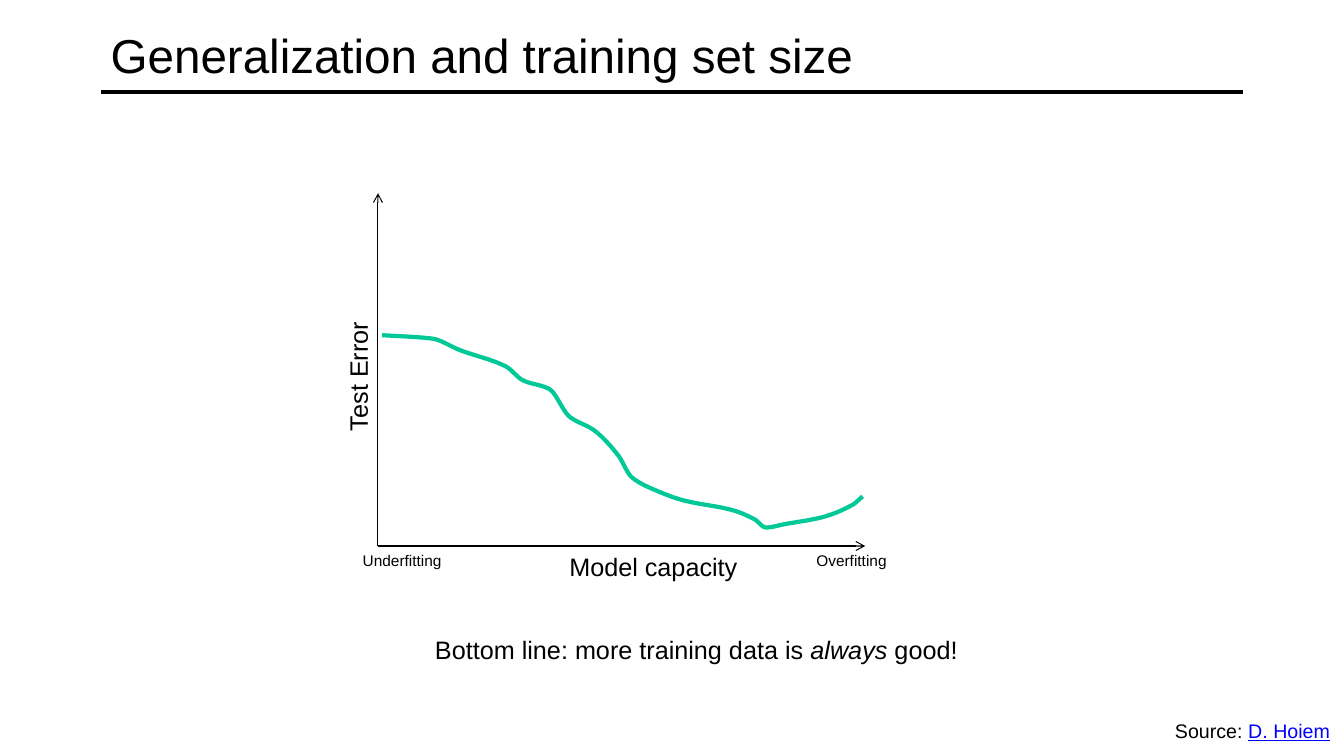
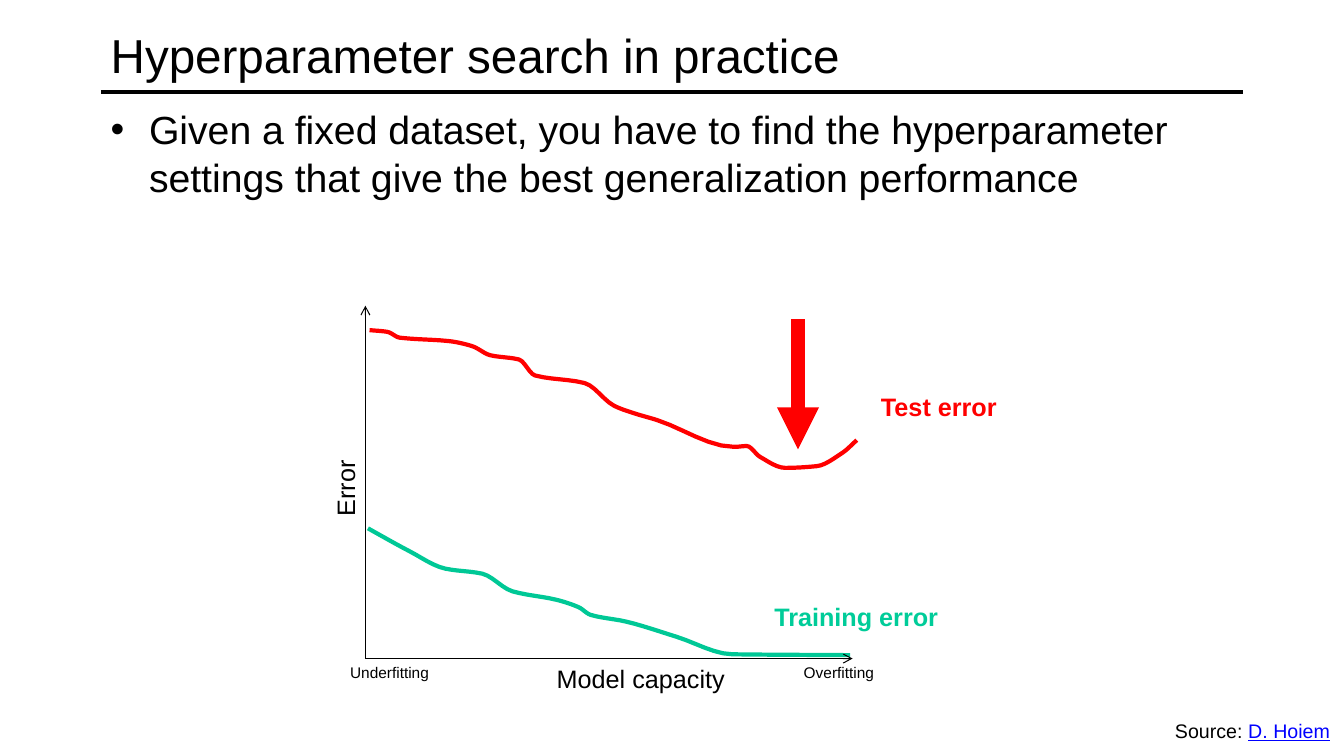
from itertools import pairwise
from lxml import etree
from pptx import Presentation
from pptx.dml.color import RGBColor
from pptx.enum.shapes import MSO_CONNECTOR
from pptx.enum.text import MSO_ANCHOR
from pptx.oxml.ns import qn
from pptx.util import Inches, Pt

STRAIGHT = MSO_CONNECTOR.STRAIGHT
TOP, MIDDLE = MSO_ANCHOR.TOP, MSO_ANCHOR.MIDDLE
FONT = "Arial"
BLACK, RED, BLUE = "000000", "FF0000", "0000FF"
CURVE_GREEN, LABEL_GREEN = "00C896", "00CC99"
TITLE_SIZE, BODY_SIZE, LABEL_SIZE, SOURCE_SIZE, END_SIZE = 34, 28, 18, 14, 11

# Grid of the slide, in columns and rows
COLUMNS, ROWS = 160, 90
MARGIN = 12
CONTENT_WIDTH = COLUMNS - 2 * MARGIN
TITLE_TOP, TITLE_HEIGHT, RULE_ROW = 1, 11, 11
LABEL_HEIGHT, END_HEIGHT = 4.8, 3.5

# Plot: axis lengths, and how the error label stands off the origin
AXIS_WIDTH, AXIS_HEIGHT = 58, 42
ERROR_LEFT, ERROR_UP = 2.4, 20.3
CURVE_STEPS = 6
BULLET_INDENT = Inches(0.38)

presentation = Presentation()
presentation.slide_width = Inches(13.33)
presentation.slide_height = Inches(7.5)
column = presentation.slide_width / COLUMNS
row = presentation.slide_height / ROWS
blank_layout = presentation.slide_layouts[6]


def add_text(slide, box, text, size, color=BLACK, bold=False, anchor=TOP,
             wrap=False, bullet=None, rotation=0):
    """Place one paragraph in a box given as left, top, columns and rows."""
    left, top, width, height = box
    shape = slide.shapes.add_textbox(round(left * column), round(top * row),
                                     round(width * column), round(height * row))
    shape.rotation = rotation
    frame = shape.text_frame
    frame.word_wrap = wrap
    frame.vertical_anchor = anchor
    paragraph = frame.paragraphs[0]
    paragraph.text = text
    if bullet:
        properties = paragraph._p.get_or_add_pPr()
        properties.set("marL", str(BULLET_INDENT))
        properties.set("indent", str(-BULLET_INDENT))
        etree.SubElement(properties, qn("a:buFont")).set("typeface", FONT)
        etree.SubElement(properties, qn("a:buChar")).set("char", bullet)
    paragraph.font.name = FONT
    paragraph.font.size = Pt(size)
    paragraph.font.bold = bold
    paragraph.font.color.rgb = RGBColor.from_string(color)
    return paragraph


def add_line(slide, start, end, width, color=BLACK, head=None):
    """Draw a straight line between two grid points."""
    line = slide.shapes.add_connector(
        STRAIGHT, round(start[0] * column), round(start[1] * row),
        round(end[0] * column), round(end[1] * row))
    line.line.width = Pt(width)
    line.line.color.rgb = RGBColor.from_string(color)
    if head:
        outline = line.line._get_or_add_ln()
        etree.SubElement(outline, qn("a:tailEnd")).set("type", head)
    etree.SubElement(line._element.spPr, qn("a:effectLst"))


# Bends of each curve: columns right of the origin, rows above it
capacity_bends = [
    (0.5, 25.1), (6.4, 24.7), (9.8, 23.3), (15.2, 21.4), (17.3, 19.7),
    (20.4, 18.7), (22.8, 15.4), (25.7, 13.8), (28.6, 10.8), (30.2, 8.2),
    (32.9, 6.7), (36.5, 5.4), (42.1, 4.3), (44.8, 3.2), (46.2, 2.2),
    (48.4, 2.6), (52.8, 3.4), (56.5, 4.9), (57.7, 5.9)]
training_bends = [
    (0.3, 15.5), (5.2, 12.8), (9.5, 10.7), (13.9, 10.1), (17.5, 8),
    (22.7, 7), (25.4, 6.1), (26.8, 5.2), (31, 4.4), (37, 2.6),
    (43.7, 0.5), (57.7, 0.4)]
test_bends = [
    (0.5, 39.1), (2.6, 38.9), (4.1, 38.2), (9.9, 37.8), (12.7, 37.2),
    (14.9, 36.1), (18.3, 35.6), (20.2, 33.7), (26.1, 32.8), (29.6, 30.1),
    (32, 29.2), (34.7, 28.4), (43.9, 25.2), (45.4, 25.3), (47, 24),
    (50, 22.7), (53.7, 22.9), (56.8, 24.5), (58.5, 26)]

# Title, plot origin, name and length of the error label, coloured curves
plots = [
    ("Generalization and training set size", (45, 65), "Test Error", 15.6,
     [(CURVE_GREEN, capacity_bends)]),
    ("Hyperparameter search in practice", (43.5, 78.4), "Error", 9.1,
     [(CURVE_GREEN, training_bends), (RED, test_bends)]),
]

# Labels under the horizontal axis: text, offset from origin, box, size
axis_labels = [
    ("Model capacity", 21.6, 22.6, LABEL_HEIGHT, LABEL_SIZE),
    ("Overfitting", 51, 10.8, END_HEIGHT, END_SIZE),
    ("Underfitting", -3, 11.9, END_HEIGHT, END_SIZE),
]

slides = []
for title, (origin_x, origin_y), error_name, error_length, curves in plots:
    slide = presentation.slides.add_slide(blank_layout)
    slides.append(slide)

    # Title, rule and source line
    add_line(slide, (MARGIN, RULE_ROW), (COLUMNS - MARGIN, RULE_ROW), 3)
    add_text(slide, (MARGIN, TITLE_TOP, CONTENT_WIDTH, TITLE_HEIGHT), title,
             TITLE_SIZE, anchor=MIDDLE, wrap=True)
    source = add_text(slide, (138.7, 85, 21, 4), "Source: ", SOURCE_SIZE)
    author = source.add_run()
    author.text = "D. Hoiem"
    author.font.underline = True
    author.font.color.rgb = RGBColor.from_string(BLUE)

    for color, bends in curves:
        # Slope at each bend: harmonic mean of its sides, flat where they turn
        sides = [(y2 - y1) / (x2 - x1) for (x1, y1), (x2, y2) in pairwise(bends)]
        inner = [2 * a * b / (a + b) if a * b > 0 else 0
                 for a, b in pairwise(sides)]
        slopes = [sides[0], *inner, sides[-1]]

        # Cubic pieces that pass through the bends with those slopes
        points = [bends[0]]
        for ((x1, y1), (x2, y2)), (slope1, slope2) in zip(pairwise(bends),
                                                          pairwise(slopes)):
            span = x2 - x1
            for step in range(1, CURVE_STEPS + 1):
                t = step / CURVE_STEPS
                rise = t * t * (3 - 2 * t)
                bow = t * (1 - t) * ((1 - t) * slope1 - t * slope2)
                points.append((x1 + t * span, y1 + rise * (y2 - y1) + bow * span))

        places = [((origin_x + right) * column, (origin_y - up) * row)
                  for right, up in points]
        builder = slide.shapes.build_freeform(*places[0])
        builder.add_line_segments(places[1:], close=False)
        curve = builder.convert_to_shape()
        curve.shadow.inherit = False
        curve.fill.background()
        curve.line.width = Pt(3)
        curve.line.color.rgb = RGBColor.from_string(color)

    # Axes and their labels
    for end in [(origin_x, origin_y - AXIS_HEIGHT),
                (origin_x + AXIS_WIDTH, origin_y)]:
        add_line(slide, (origin_x, origin_y), end, 0.75, head="arrow")
    for text, offset, width, height, size in axis_labels:
        add_text(slide, (origin_x + offset, origin_y, width, height), text, size)
    error_box = (origin_x - ERROR_LEFT - error_length / 2,
                 origin_y - ERROR_UP - LABEL_HEIGHT / 2,
                 error_length, LABEL_HEIGHT)
    add_text(slide, error_box, error_name, LABEL_SIZE, rotation=270)

training_size_slide, search_slide = slides

# Closing remark on training set size
remark = add_text(training_size_slide, (50.6, 74.9, 65.2, LABEL_HEIGHT),
                  "Bottom line: more training data is ", LABEL_SIZE)
emphasis = remark.add_run()
emphasis.text = "always"
emphasis.font.italic = True
remark.add_run().text = " good!"

# Advice, curve names and arrow to the lowest test error
add_text(search_slide, (MARGIN, TITLE_TOP + TITLE_HEIGHT, CONTENT_WIDTH, 22),
         "Given a fixed dataset, you have to find the hyperparameter settings "
         "that give the best generalization performance",
         BODY_SIZE, wrap=True, bullet="•")
for name, left, top, width, color in [
        ("Training error", 91, 71, 22.1, LABEL_GREEN),
        ("Test error", 103.7, 46, 16.3, RED)]:
    add_text(search_slide, (left, top, width, LABEL_HEIGHT), name, LABEL_SIZE,
             color, bold=True)
add_line(search_slide, (95, 38), (95, 53.5), 10, RED, head="triangle")

presentation.save("out.pptx")
